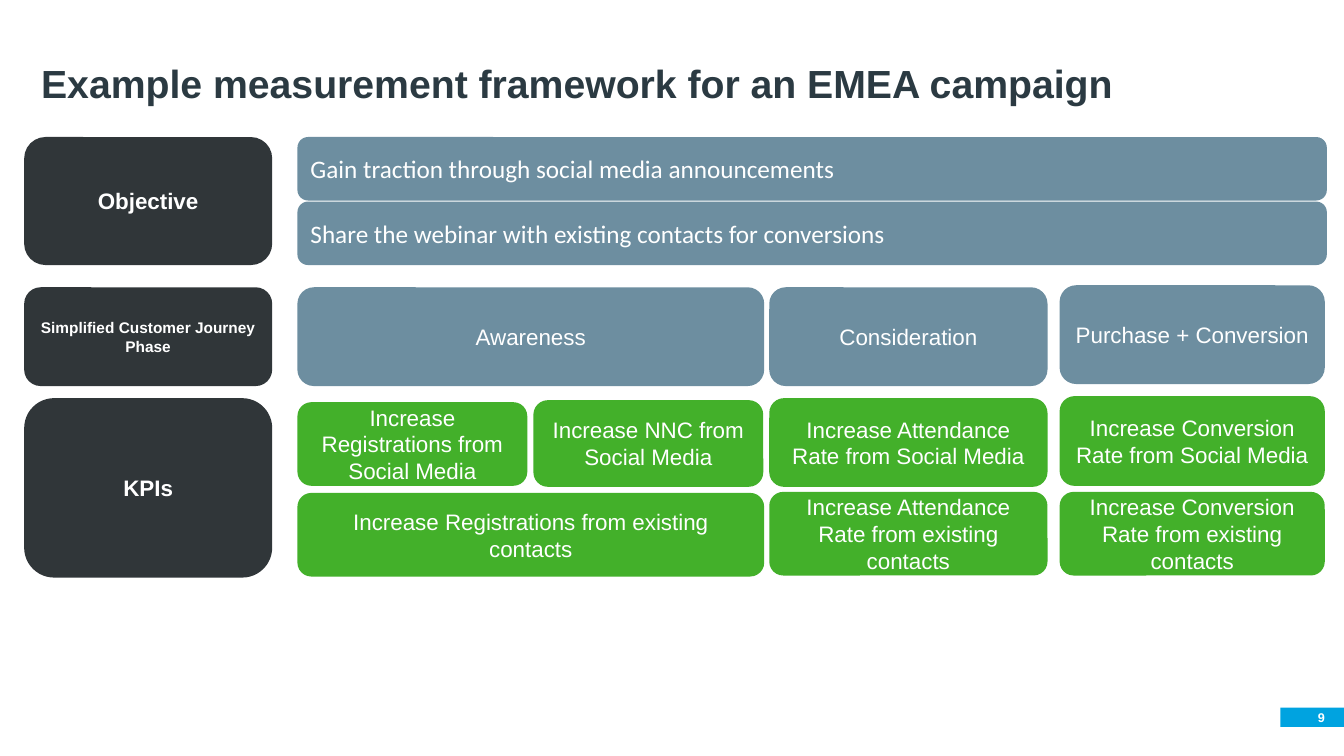
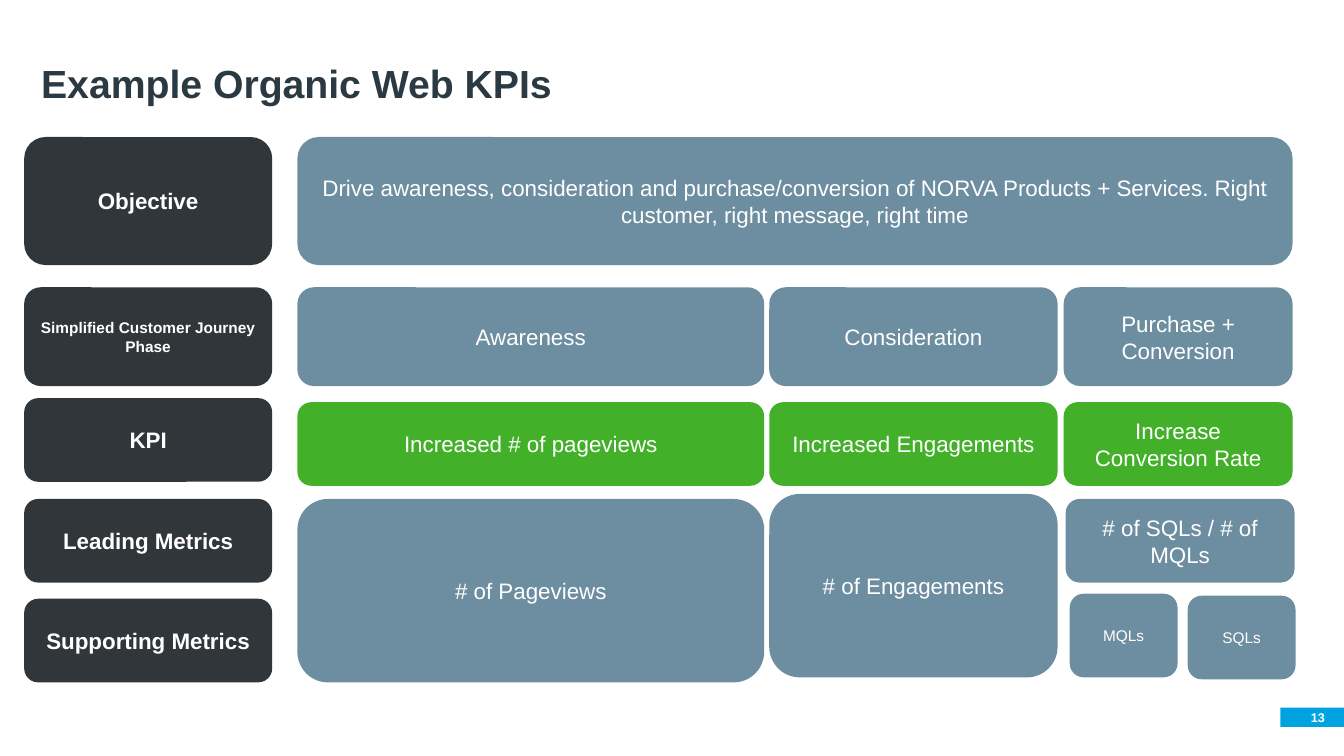
from pptx import Presentation
from pptx.dml.color import RGBColor
from pptx.enum.shapes import MSO_SHAPE
from pptx.enum.text import MSO_ANCHOR, PP_ALIGN
from pptx.util import Inches, Pt

# Shared colours and fonts
DARK, STEEL, GREEN = "303639", "6D8EA0", "43B02A"
BLUE, INK, WHITE = "00A3E0", "2B3A42", "FFFFFF"
SANS, BODY = "Arial", "Calibri"

# Shared grid: (left, width) of columns, (top, height) of rows
LABELS = (0.24, 2.46)
AWARENESS = (2.95, 4.63)
OBJECTIVE = (1.36, 1.27)
PHASE = (2.85, 0.98)
BOX_H = 0.83


def color(value):
    return RGBColor.from_string(value)


def write(sp, text, size, fill=WHITE, bold=False, font=SANS,
          align=PP_ALIGN.CENTER, anchor=MSO_ANCHOR.MIDDLE):
    """Put one styled paragraph into a shape."""
    tf = sp.text_frame
    tf.word_wrap = True
    tf.vertical_anchor = anchor
    p = tf.paragraphs[0]
    p.text = text
    p.alignment = align
    p.font.name = font
    p.font.size = Pt(size)
    p.font.bold = bold
    p.font.color.rgb = color(fill)
    return tf


def add_panel(s, kind, col, row, fill):
    """Add a filled shape without outline or shadow."""
    (left, width), (top, height) = col, row
    sp = s.shapes.add_shape(kind, Inches(left), Inches(top),
                            Inches(width), Inches(height))
    sp.shadow.inherit = False
    sp.fill.solid()
    sp.fill.fore_color.rgb = color(fill)
    sp.line.fill.background()
    return sp


def add_box(s, col, row, text, fill=STEEL, size=16, **style):
    sp = add_panel(s, MSO_SHAPE.ROUNDED_RECTANGLE, col, row, fill)
    write(sp, text, size, **style)


def add_labels(s, labels):
    """Left column: the two common rows, then this slide's own rows."""
    common = [(OBJECTIVE, "Objective", 16),
              (PHASE, "Simplified Customer Journey Phase", 11)]
    for row, text, size in common + [(row, text, 16) for row, text in labels]:
        add_box(s, LABELS, row, text, DARK, size, bold=True)


def add_slide(prs, title, number):
    """Blank slide with the shared title and page number tab."""
    s = prs.slides.add_slide(prs.slide_layouts[6])
    tab = add_panel(s, MSO_SHAPE.RECTANGLE, (12.7, 0.63), (7.02, 0.19), BLUE)
    tf = write(tab, str(number), 9, bold=True, align=PP_ALIGN.RIGHT)
    tf.margin_left = tf.margin_top = tf.margin_bottom = 0
    tf.margin_right = Inches(0.19)

    sp = s.shapes.add_textbox(Inches(0.31), Inches(0.27),
                              Inches(12.51), Inches(0.84))
    tf = write(sp, title, 28, INK, bold=True, align=PP_ALIGN.LEFT,
               anchor=MSO_ANCHOR.BOTTOM)
    tf.paragraphs[0].line_spacing = 0.9
    return s


def build_campaign(prs):
    s = add_slide(prs, "Example measurement framework for an EMEA campaign", 9)
    add_labels(s, [((3.95, 1.78), "KPIs")])
    consideration, purchase = (7.63, 2.76), (10.51, 2.63)

    # Objectives
    objectives = ["Gain traction through social media announcements",
                  "Share the webinar with existing contacts for conversions"]
    for i, text in enumerate(objectives):
        add_box(s, (2.95, 10.21), (1.36 + i * 0.64, 0.63), text,
                size=18, font=BODY, align=PP_ALIGN.LEFT)

    # Journey phases
    add_box(s, AWARENESS, PHASE, "Awareness")
    add_box(s, consideration, PHASE, "Consideration")
    add_box(s, purchase, (2.83, 0.98), "Purchase + Conversion")

    # KPIs: social media above, existing contacts below
    kpis = [
        ((2.95, 2.28), (3.99, BOX_H), "Increase Registrations from Social Media"),
        ((5.29, 2.28), (3.97, 0.86), "Increase NNC from Social Media"),
        (consideration, (3.95, 0.88), "Increase Attendance Rate from Social Media"),
        (purchase, (3.93, 0.89), "Increase Conversion Rate from Social Media"),
        (AWARENESS, (4.89, BOX_H), "Increase Registrations from existing contacts"),
        (consideration, (4.88, BOX_H), "Increase Attendance Rate from existing contacts"),
        (purchase, (4.88, BOX_H), "Increase Conversion Rate from existing contacts"),
    ]
    for col, row, text in kpis:
        add_box(s, col, row, text, GREEN)


def build_web_kpis(prs):
    s = add_slide(prs, "Example Organic Web KPIs", 13)
    add_labels(s, [((3.95, BOX_H), "KPI"),
                   ((4.95, BOX_H), "Leading Metrics"),
                   ((5.94, BOX_H), "Supporting Metrics")])

    # Objective
    add_box(s, (2.95, 9.87), OBJECTIVE,
            "Drive awareness, consideration and purchase/conversion of NORVA "
            "Products + Services. Right customer, right message, right time")

    # Journey phases, each with its KPI
    consideration = (7.63, 2.86)
    phases = [
        (AWARENESS, "Awareness", "Increased # of pageviews"),
        (consideration, "Consideration", "Increased Engagements"),
        ((10.55, 2.27), "Purchase + Conversion", "Increase Conversion Rate"),
    ]
    for col, phase, kpi in phases:
        add_box(s, col, PHASE, phase)
        add_box(s, col, (3.99, BOX_H), kpi, GREEN)

    # Leading and supporting metrics
    add_box(s, AWARENESS, (4.95, 1.82), "# of Pageviews")
    add_box(s, consideration, (4.9, 1.82), "# of Engagements")
    add_box(s, (10.57, 2.27), (4.95, BOX_H), "# of SQLs / # of MQLs")
    add_box(s, (10.61, 1.07), (5.89, BOX_H), "MQLs", size=11)
    add_box(s, (11.78, 1.07), (5.91, BOX_H), "SQLs", size=11)


def main():
    prs = Presentation()
    prs.slide_width, prs.slide_height = Inches(13.33), Inches(7.5)
    build_campaign(prs)
    build_web_kpis(prs)
    prs.save("out.pptx")


if __name__ == "__main__":
    main()
